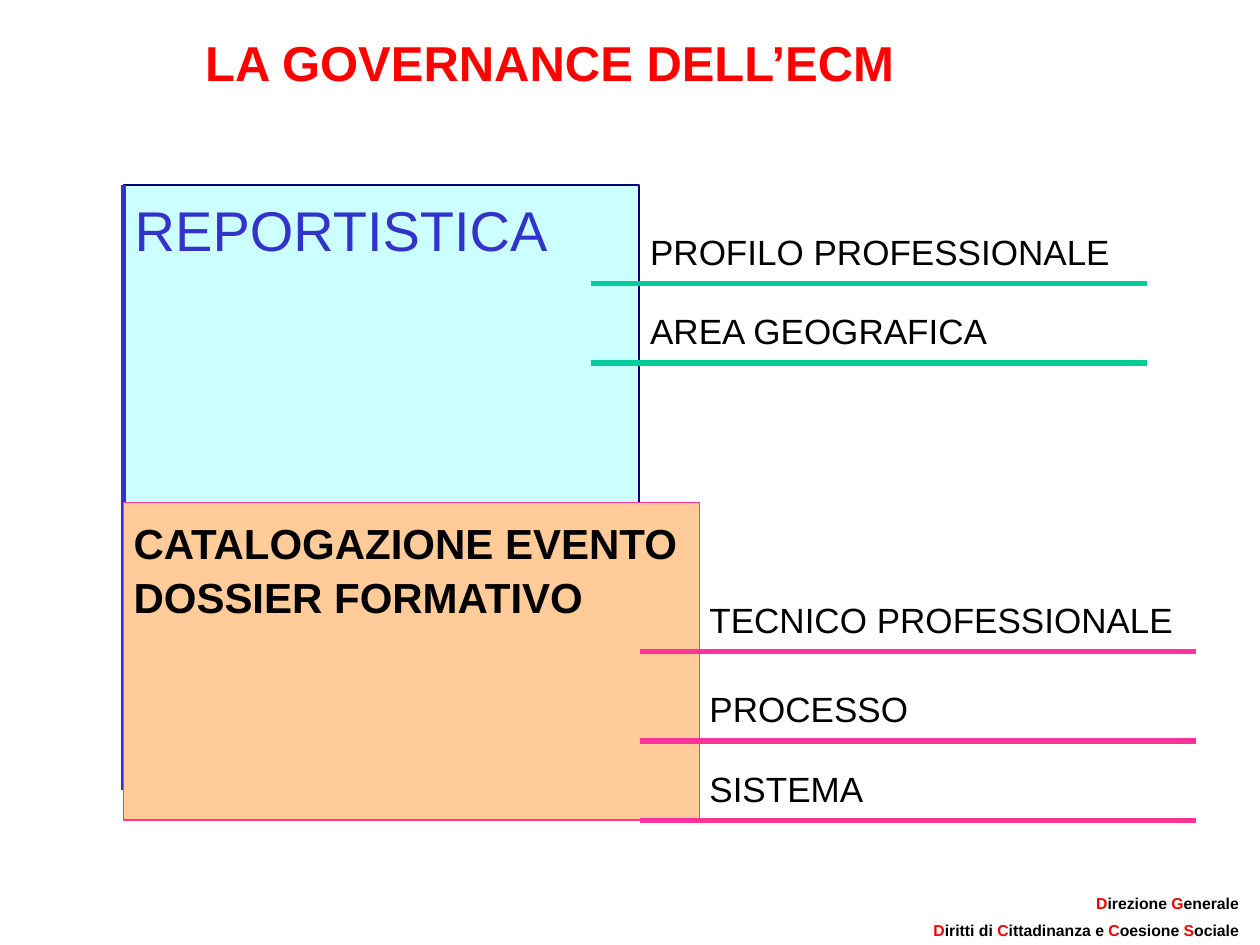
from lxml import etree
from pptx import Presentation
from pptx.dml.color import RGBColor
from pptx.enum import shapes, text
from pptx.oxml import ns
from pptx.util import Pt

RED = RGBColor(0xFF, 0x00, 0x00)
INITIAL_RED = RGBColor(0xF0, 0x00, 0x00)
BLACK = RGBColor(0x00, 0x00, 0x00)
BLUE = RGBColor(0x33, 0x33, 0xCC)
NAVY = RGBColor(0x00, 0x00, 0x80)
PALE_CYAN = RGBColor(0xCC, 0xFF, 0xFF)
ORANGE = RGBColor(0xFF, 0xCC, 0x99)
PINK = RGBColor(0xFF, 0x33, 0x99)
GREEN = RGBColor(0x00, 0xCC, 0x99)

presentation = Presentation()
presentation.slide_width, presentation.slide_height = Pt(720), Pt(540)
slide = presentation.slides.add_slide(presentation.slide_layouts[6])


def add_text(left, top, width, height, lines, size, bold=False, spacing=0.93,
             gap=0, inset=(0, 0), align=text.PP_ALIGN.LEFT, wrap=True):
    """Each line is a list of (words, colour) runs; gap is the space between lines."""
    box = slide.shapes.add_textbox(Pt(left), Pt(top), Pt(width), Pt(height))
    frame = box.text_frame
    frame.word_wrap = wrap
    frame.margin_left = frame.margin_right = Pt(inset[0])
    frame.margin_top = frame.margin_bottom = Pt(inset[1])
    for index, line in enumerate(lines):
        paragraph = frame.add_paragraph() if index else frame.paragraphs[0]
        paragraph.alignment = align
        paragraph.line_spacing = spacing
        if index:
            paragraph.space_before = Pt(gap)
        for words, colour in line:
            run = paragraph.add_run()
            run.text = words
            run.font.name = "Arial"
            run.font.size = Pt(size)
            run.font.bold = bold
            run.font.color.rgb = colour


def add_line(left, top, right, bottom, colour):
    line = slide.shapes.add_connector(
        shapes.MSO_CONNECTOR.STRAIGHT, Pt(left), Pt(top), Pt(right), Pt(bottom))
    line.line.color.rgb = colour
    line.line.width = Pt(3)
    etree.SubElement(line._element.spPr, ns.qn("a:effectLst"))


# Footer: capital initials in red
footer = [["Direzione ", "Generale"],
          ["Diritti di ", "Cittadinanza e ", "Coesione ", "Sociale"]]
footer_lines = [[run for words in line
                 for run in ((words[0], INITIAL_RED), (words[1:], BLACK))]
                for line in footer]
add_text(462, 508.3, 253, 47.5, footer_lines, 9, bold=True, spacing=0.9, gap=5.6,
         inset=(7.2, 3.6), align=text.PP_ALIGN.RIGHT)

add_text(110.2, 15.1, 598, 41, [[("LA GOVERNANCE DELL’ECM", RED)]], 28,
         bold=True, spacing=1.0, inset=(7.2, 3.6))

# Panels, with the blue edge passing between them
for left, top, width, height, fill, outline in [
        (70.6, 105.8, 294.5, 204.5, PALE_CYAN, NAVY),
        (70.6, 287.3, 329, 181.4, ORANGE, PINK)]:
    if fill == ORANGE:
        add_line(70.6, 105.8, 70.6, 451.4, BLUE)
    panel = slide.shapes.add_shape(
        shapes.MSO_SHAPE.RECTANGLE, Pt(left), Pt(top), Pt(width), Pt(height))
    panel.shadow.inherit = False
    panel.fill.solid()
    panel.fill.fore_color.rgb = fill
    panel.line.color.rgb = outline
    panel.line.width = Pt(0.75)

add_text(77, 115.2, 243.4, 36, [[("REPORTISTICA", BLUE)]], 32, wrap=False)
add_text(76.3, 298.1, 459.4, 58.3,
         [[("CATALOGAZIONE EVENTO", BLACK)], [("DOSSIER FORMATIVO", BLACK)]],
         24, bold=True, gap=4.3)

# Underlined labels beside each panel
for line_left, label_left, colour, labels in [
        (337.7, 371.5, GREEN, [("PROFILO PROFESSIONALE", 162),
                               ("AREA GEOGRAFICA", 207.4)]),
        (365.8, 405.4, PINK, [("TECNICO PROFESSIONALE", 372.2),
                              ("PROCESSO", 423.4),
                              ("SISTEMA", 468.7)])]:
    for label, line_top in labels:
        add_line(line_left, line_top, line_left + 317.5, line_top, colour)
        add_text(label_left, line_top - 28.2, 266.4, 22.3, [[(label, BLACK)]], 20)

presentation.save("out.pptx")
